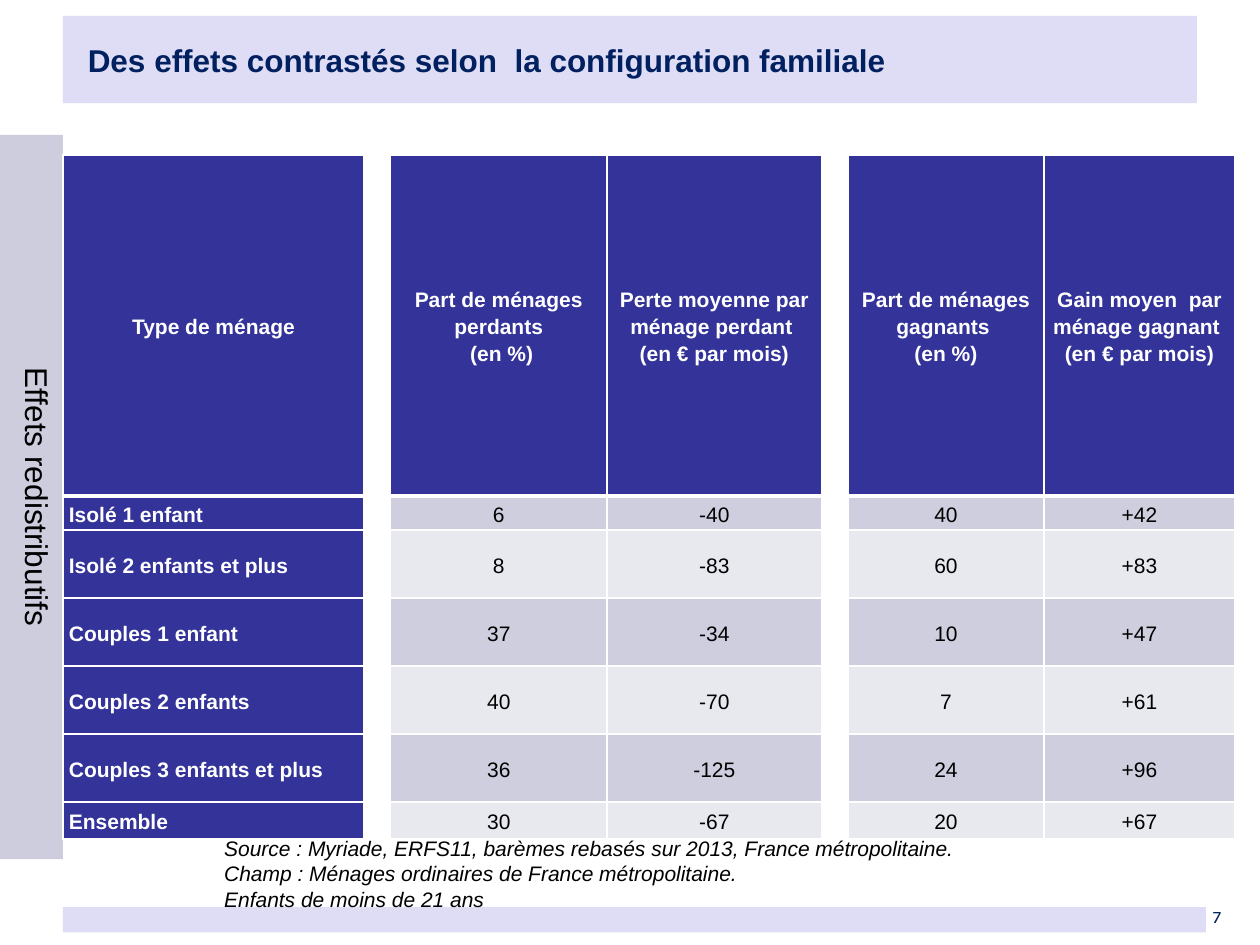
"""Build the slide on redistributive effects by family type."""
from lxml import etree
from pptx import Presentation
from pptx.dml.color import RGBColor
from pptx.enum.shapes import MSO_SHAPE
from pptx.enum.text import MSO_ANCHOR, PP_ALIGN
from pptx.oxml.ns import qn
from pptx.util import Cm, Pt

RECT = MSO_SHAPE.RECTANGLE
MID, TOP = MSO_ANCHOR.MIDDLE, MSO_ANCHOR.TOP
LEFT, CENTER = PP_ALIGN.LEFT, PP_ALIGN.CENTER
NAVY, BLUE, LILAC = "002060", "333399", "CAC4EE"
BLACK, WHITE, GREY = "000000", "FFFFFF", "CDCDDE"
BANDS = ("CECEDE", "E8E8EF")
GAPS = (1, 4)
COLS = (6.07, 0.53, 4.37, 4.32, 0.53, 3.96, 3.84)
ROWS = (6.88, 0.69, 1.37, 1.37, 1.37, 1.37, 0.74)
HEAD = (
    "Type de ménage",
    "",
    "Part de ménages perdants\n (en %)",
    "Perte moyenne par ménage perdant \n(en € par mois)",
    "",
    "Part de ménages gagnants \n(en %)",
    "Gain moyen  par ménage gagnant \n(en € par mois)",
)
DATA = (
    ("Isolé 1 enfant", "", "6", "-40", "", "40", "+42"),
    ("Isolé 2 enfants et plus", "", "8", "-83", "", "60", "+83"),
    ("Couples 1 enfant", "", "37", "-34", "", "10", "+47"),
    ("Couples 2 enfants", "", "40", "-70", "", "7", "+61"),
    ("Couples 3 enfants et plus", "", "36", "-125", "", "24", "+96"),
    ("Ensemble", "", "30", "-67", "", "20", "+67"),
)
NOTE = """Source : Myriade, ERFS11, barèmes rebasés sur 2013, France métropolitaine.
Champ : Ménages ordinaires de France métropolitaine.
Enfants de moins de 21 ans"""


def color(code):
    """Turn a hex string into a colour."""
    return RGBColor.from_string(code)


class Deck:
    """Hold the style and the current slide."""

    def __init__(self, font="Arial"):
        """Start a deck with one blank slide."""
        self.font = font
        self.file = Presentation()
        self.file.slide_width, self.file.slide_height = Cm(25.4), Cm(19.05)
        self.slide = self.file.slides.add_slide(self.file.slide_layouts[6])

    def words(self, frame, text, size, tone, bold=False, slant=False,
              align=LEFT, lead=None, font=None):
        """Fill a text frame and format its runs."""
        frame.text = text
        for para in frame.paragraphs:
            para.alignment = align
            para.line_spacing = lead
            for run in para.runs:
                run.font.name = font or self.font
                run.font.size = Pt(size)
                run.font.bold, run.font.italic = bold, slant
                run.font.color.rgb = color(tone)

    def bar(self, x, y, w, h, fill, alpha=None):
        """Draw a plain rectangle, see-through if alpha is given."""
        shape = self.slide.shapes.add_shape(RECT, Cm(x), Cm(y), Cm(w), Cm(h))
        shape.shadow.inherit = False
        shape.fill.solid()
        shape.fill.fore_color.rgb = color(fill)
        shape.line.fill.background()
        if alpha:
            tint = next(shape.element.iter(qn("a:srgbClr")))
            etree.SubElement(tint, qn("a:alpha"), val=str(alpha * 1000))
        return shape

    def title(self, shape, text):
        """Set the title inside its bar."""
        frame = shape.text_frame
        frame.word_wrap = True
        frame.vertical_anchor = MID
        frame.margin_left = frame.margin_right = Cm(0.5)
        self.words(frame, text, 18, NAVY, bold=True)

    def label(self, x, y, w, h, text, size, tone=BLACK, anchor=TOP,
              wrap=True, turn=False, **style):
        """Add a text box, turned downwards on demand."""
        box = self.slide.shapes.add_textbox(Cm(x), Cm(y), Cm(w), Cm(h))
        frame = box.text_frame
        frame.word_wrap = wrap
        frame.vertical_anchor = anchor
        if turn:
            box.element.txBody.find(qn("a:bodyPr")).set("vert", "vert")
        self.words(frame, text, size, tone, **style)

    def edge(self, cell, base):
        """Give a cell white borders with its own bottom width."""
        props = cell._tc.get_or_add_tcPr()
        for side, width in (("L", 1), ("R", 1), ("T", 1), ("B", base)):
            line = etree.SubElement(props, qn(f"a:ln{side}"), w=str(Pt(width)))
            fill = etree.SubElement(line, qn("a:solidFill"))
            etree.SubElement(fill, qn("a:srgbClr"), val=WHITE)

    def cell(self, cell, text, fill, base=1, **style):
        """Style one table cell and set its text."""
        cell.margin_left = cell.margin_right = Cm(0.12)
        cell.margin_top = cell.margin_bottom = 0
        cell.vertical_anchor = MID
        self.edge(cell, base)
        cell.fill.solid()
        cell.fill.fore_color.rgb = color(fill)
        if text:
            self.words(cell.text_frame, text, 12, lead=1.15, **style)
        else:
            para = cell.text_frame.paragraphs[0]._p
            etree.SubElement(para, qn("a:endParaRPr"), sz="1200")

    def table(self, x, y):
        """Add the table of losers and winners."""
        rows = (HEAD, *DATA)
        table = self.slide.shapes.add_table(
            len(ROWS), len(COLS), Cm(x), Cm(y),
            Cm(sum(COLS)), Cm(sum(ROWS))).table
        for col, width in zip(table.columns, COLS):
            col.width = Cm(width)
        for r, (row, height) in enumerate(zip(rows, ROWS)):
            table.rows[r].height = Cm(height)
            for c, text in enumerate(row):
                top = r == 0
                main = top or c == 0
                fill = BLUE if main else BANDS[(r - 1) % 2]
                self.cell(
                    table.cell(r, c), text, WHITE if c in GAPS else fill,
                    base=3 if top else 1, bold=main,
                    tone=WHITE if main else BLACK,
                    align=CENTER if top or c else LEFT)


def main():
    """Compose and save the slide."""
    deck = Deck()
    side = (0, 2.72, 1.27, 14.6)
    deck.bar(1.27, 18.29, 23.04, 0.51, LILAC, 59)
    deck.label(24.2, 18.19, 1.2, 0.64, "7", 10, NAVY, wrap=False,
               lead=0.9, font="Karla")
    deck.bar(*side, GREY)
    band = deck.bar(1.27, 0.32, 22.86, 1.76, LILAC, 59)
    deck.title(band, "Des effets contrastés selon  la configuration familiale")
    deck.table(1.27, 3.12)
    deck.label(*side, "Effets redistributifs", 18, turn=True, align=CENTER)
    deck.label(4.27, 16.71, 16.23, 1.8, NOTE, 12, anchor=MID, slant=True)
    deck.file.save("out.pptx")


if __name__ == "__main__":
    main()
